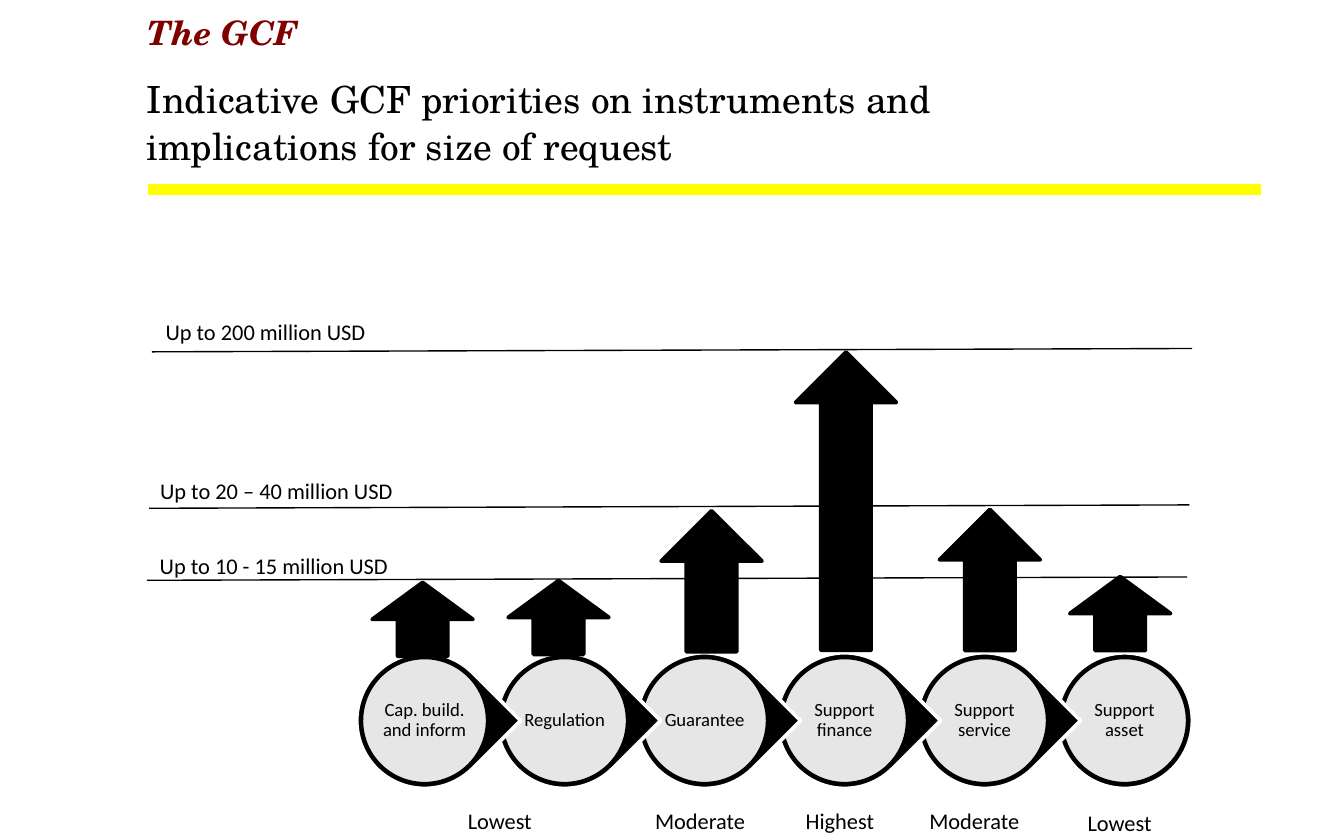
from dataclasses import dataclass

from lxml import etree
from pptx import Presentation
from pptx.dml.color import RGBColor
from pptx.enum.shapes import MSO_CONNECTOR, MSO_SHAPE
from pptx.enum.text import MSO_ANCHOR, PP_ALIGN
from pptx.oxml.ns import qn
from pptx.slide import Slide
from pptx.util import Pt

STRAIGHT = MSO_CONNECTOR.STRAIGHT
ELLIPSE, TEARDROP, UP_ARROW = MSO_SHAPE.OVAL, MSO_SHAPE.TEAR, MSO_SHAPE.UP_ARROW
TOP, MIDDLE, BOTTOM = MSO_ANCHOR.TOP, MSO_ANCHOR.MIDDLE, MSO_ANCHOR.BOTTOM
LEFT, CENTER = PP_ALIGN.LEFT, PP_ALIGN.CENTER

COLORS = {"black": "000000", "white": "FFFFFF", "maroon": "800000", "yellow": "FFFF00"}
BODY_FONT, HEADING_FONT = "Calibri", "TeX Gyre Schola"


@dataclass
class Deck:
    """Hold the style and the current slide, and draw its elements."""

    slide: Slide

    def color(self, name):
        return RGBColor.from_string(COLORS[name])

    def line(self, x1, y1, x2, y2, color="black", weight=0.75):
        rule = self.slide.shapes.add_connector(STRAIGHT, Pt(x1), Pt(y1), Pt(x2), Pt(y2))
        rule.line.color.rgb = self.color(color)
        rule.line.width = Pt(weight)
        etree.SubElement(rule._element.spPr, qn("a:effectLst"))

    def shape(self, kind, x, y, width, height, fill="black", outline="black", rotation=0, alpha=None):
        figure = self.slide.shapes.add_shape(kind, Pt(x), Pt(y), Pt(width), Pt(height))
        figure.shadow.inherit = False
        figure.rotation = rotation
        figure.fill.solid()
        figure.fill.fore_color.rgb = self.color(fill)
        figure.line.color.rgb = self.color(outline)
        figure.line.width = Pt(2)
        if alpha is not None:
            tint = figure._element.spPr.find(qn("a:solidFill")).find(qn("a:srgbClr"))
            etree.SubElement(tint, qn("a:alpha"), val=str(alpha * 1000))

    def text(self, words, x, y, width, height, size=12, font=BODY_FONT, color="black", align=LEFT,
             anchor=TOP, margins=(7.2, 3.6), spacing=1.0, emphasis=False):
        box = self.slide.shapes.add_textbox(Pt(x), Pt(y), Pt(width), Pt(height))
        frame = box.text_frame
        frame.word_wrap = True
        frame.vertical_anchor = anchor
        frame.margin_left = frame.margin_right = Pt(margins[0])
        frame.margin_top = frame.margin_bottom = Pt(margins[1])
        paragraph = frame.paragraphs[0]
        paragraph.alignment = align
        paragraph.line_spacing = spacing
        run = paragraph.add_run()
        run.text = words
        run.font.name = font
        run.font.size = Pt(size)
        run.font.bold = run.font.italic = emphasis
        run.font.color.rgb = self.color(color)

    def instrument(self, name, x, y, has_next):
        outer, ring, label = 72.7, 67.7, 48.2
        self.shape(TEARDROP if has_next else ELLIPSE, x, y, outer, outer,
                   outline="white", rotation=45 if has_next else 0)
        inset = (outer - ring) / 2
        self.shape(ELLIPSE, x + inset, y + inset, ring, ring, fill="white", alpha=90)
        inset = (outer - label) / 2
        self.text(name, x + inset, y + inset, label, label, size=10, align=CENTER,
                  anchor=MIDDLE, margins=(0.7, 0.7), spacing=0.9)


def main():
    presentation = Presentation()
    presentation.slide_width, presentation.slide_height = Pt(720), Pt(450)
    deck = Deck(presentation.slides.add_slide(presentation.slide_layouts[6]))

    deck.line(79.2, 101.7, 675.4, 101.7, color="yellow", weight=6)
    deck.text("Indicative GCF priorities on instruments and implications for size of request",
              78.7, 12.2, 440.6, 77.8, size=20, font=HEADING_FONT, anchor=BOTTOM,
              margins=(0, 0), spacing=1.05)
    deck.text("The GCF", 72, 2.9, 342, 28.8, size=18, font=HEADING_FONT, color="maroon",
              emphasis=True)

    instruments = ["Cap. build. and inform", "Regulation", "Guarantee", "Support finance",
                   "Support service", "Support asset"]
    last = len(instruments) - 1
    for index in range(last, -1, -1):
        deck.instrument(instruments[index], 191.1 + 75 * index, 349.7, index < last)

    priorities = [("Lowest", 231.8, 429.1), ("Moderate", 339.1, 429.1), ("Highest", 414, 429.1),
                  ("Moderate", 486, 429.1), ("Lowest", 563.8, 429.8)]
    for priority, x, y in priorities:
        deck.text(priority, x, y, 72, 21.6, align=CENTER)

    small, medium, large = 39.6, 75.6, 159.8
    request_arrows = [(199.4, 312, small), (272.2, 311, small), (354.2, 273.6, medium),
                      (426.2, 188.6, large), (503.3, 272.9, medium), (573.1, 308.9, small)]
    for x, y, height in request_arrows:
        deck.shape(UP_ARROW, x, y, 54, height)

    limits = [("Up to 10 - 15 million USD", 78.5, 292.3, 78.7, 310.9),
              ("Up to 20 – 40 million USD", 78.7, 252.3, 79.9, 272.3),
              ("Up to 200 million USD", 81.6, 166.8, 81.4, 188.5)]
    for limit, text_x, text_y, line_x, line_y in limits:
        deck.line(line_x, line_y, line_x + 557.3, line_y - 1.8)
        deck.text(limit, text_x, text_y, 143.3, 21.6)

    presentation.save("out.pptx")


if __name__ == "__main__":
    main()
